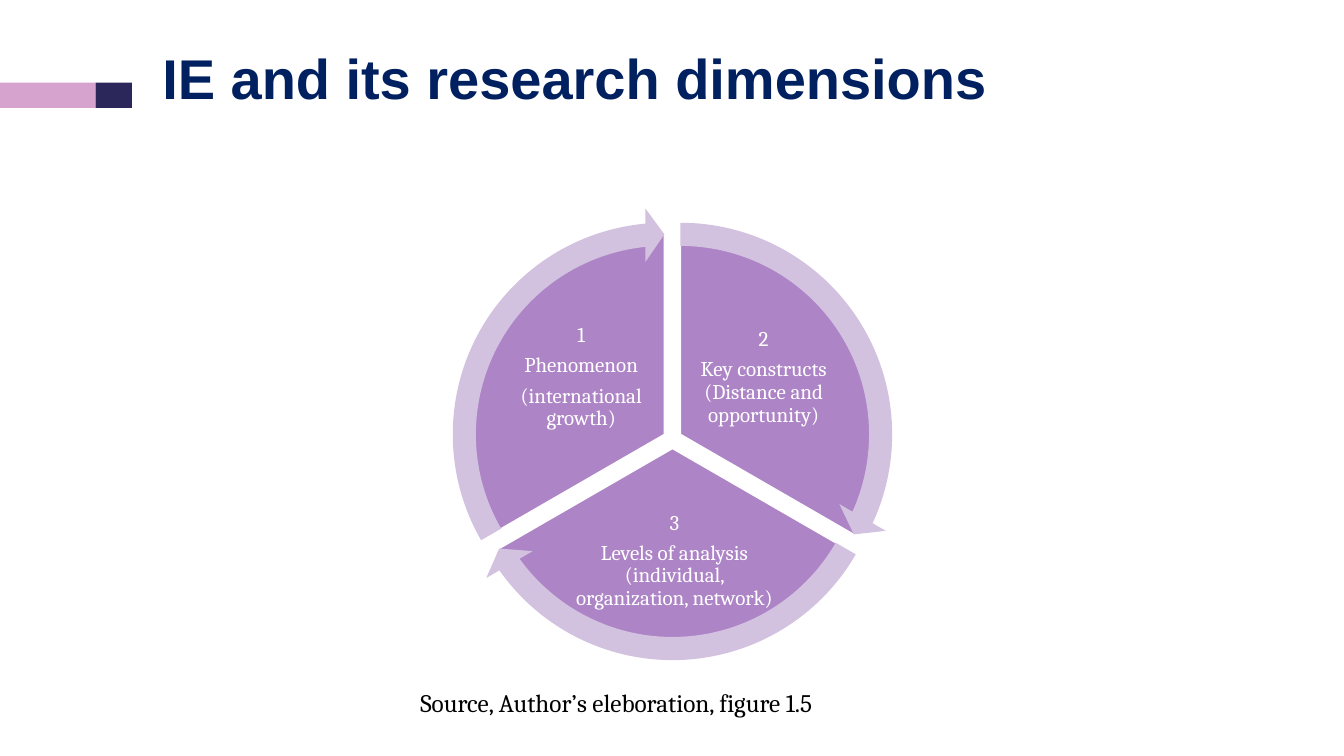
import pptx
import pptx.dml.color
import pptx.enum.shapes
import pptx.enum.text
import pptx.util
from pptx.util import Inches

SHAPES = pptx.enum.shapes.MSO_SHAPE
ALIGN = pptx.enum.text.PP_ALIGN
ANCHOR = pptx.enum.text.MSO_ANCHOR


def color(hex_code):
    return pptx.dml.color.RGBColor.from_string(hex_code)


class Deck:
    heading_font, body_font = "Arial", "Cambria"
    navy, purple, lilac, white, black = "002060", "AD84C6", "D3C2DF", "FFFFFF", "000000"
    pink, indigo = "D5A3CD", "2C275B"

    def __init__(self, width, height):
        self.presentation = pptx.Presentation()
        self.presentation.slide_width = Inches(width)
        self.presentation.slide_height = Inches(height)
        self.slide = None

    def add_slide(self):
        self.slide = self.presentation.slides.add_slide(self.presentation.slide_layouts[5])

    def format_text(self, frame, size, font, hex_code, bold=False):
        for paragraph in frame.paragraphs:
            for run in paragraph.runs:
                run.font.size = pptx.util.Pt(size)
                run.font.name = font
                run.font.bold = bold
                run.font.color.rgb = color(hex_code)

    def title(self, text, left, top, width, height):
        heading = self.slide.shapes.title
        heading.left, heading.top = Inches(left), Inches(top)
        heading.width, heading.height = Inches(width), Inches(height)
        frame = heading.text_frame
        frame.text = text
        frame.vertical_anchor = ANCHOR.MIDDLE
        frame.paragraphs[0].alignment = ALIGN.LEFT
        frame.paragraphs[0].line_spacing = 0.9
        self.format_text(frame, 40, self.heading_font, self.navy, bold=True)

    def shape(self, parent, kind, left, top, width, height, fill, line=None, adjustments=()):
        drawn = parent.shapes.add_shape(
            kind, Inches(left), Inches(top), Inches(width), Inches(height))
        drawn.shadow.inherit = False
        drawn.fill.solid()
        drawn.fill.fore_color.rgb = color(fill)
        if line:
            drawn.line.color.rgb = color(line)
            drawn.line.width = pptx.util.Pt(1)
        else:
            drawn.line.fill.background()
        for index, value in enumerate(adjustments):
            drawn.adjustments[index] = value

    def text_frame(self, parent, text, left, top, width, height):
        frame = parent.shapes.add_textbox(
            Inches(left), Inches(top), Inches(width), Inches(height)).text_frame
        frame.word_wrap = True
        frame.text = text
        return frame

    def sector_label(self, parent, lines, left, top, width, height):
        frame = self.text_frame(parent, "\n".join(lines), left, top, width, height)
        frame.vertical_anchor = ANCHOR.MIDDLE
        frame.margin_left = frame.margin_right = Inches(0.02)
        frame.margin_top = frame.margin_bottom = Inches(0.02)
        for paragraph in frame.paragraphs:
            paragraph.alignment = ALIGN.CENTER
            paragraph.line_spacing = 0.9
            paragraph.space_after = pptx.util.Pt(5.25)
        self.format_text(frame, 15, self.body_font, self.white)

    def caption(self, text, left, top, width, height):
        frame = self.text_frame(self.slide, text, left, top, width, height)
        frame.auto_size = pptx.enum.text.MSO_AUTO_SIZE.SHAPE_TO_FIT_TEXT
        self.format_text(frame, 18, self.body_font, self.black)

    def cycle(self, sectors):
        """Draw labelled pie sectors, then the arrows that run round them.

        Angles are in units of 100000, where 60000 steps make one degree.
        """
        diameter, overhang, head_angle = 4, 0.25, 3.275
        group = self.slide.shapes.add_group_shape()
        for left, top, start, end, lines, label_box in sectors:
            self.shape(group, SHAPES.PIE, left, top, diameter, diameter,
                       self.purple, self.white, (start, end))
            self.sector_label(group, lines, *label_box)
        ring = diameter + 2 * overhang
        for left, top, start, end, _, _ in sectors:
            self.shape(group, SHAPES.CIRCULAR_ARROW, left - overhang, top - overhang, ring, ring,
                       self.lilac,
                       adjustments=(0.051, head_angle, end - head_angle, start, 0.059))


def main():
    deck = Deck(13.33, 7.5)
    deck.add_slide()
    deck.shape(deck.slide, SHAPES.RECTANGLE, 0, 0.82, 0.95, 0.25, deck.pink)
    deck.shape(deck.slide, SHAPES.RECTANGLE, 0.95, 0.82, 0.36, 0.25, deck.indigo)
    deck.title("IE and its research dimensions", 1.51, 0.32, 11.5, 0.98)
    deck.cycle([
        (4.75, 2.31, 162, 18,
         ["2", "Key constructs (Distance and opportunity)"], (6.86, 3.15, 1.43, 1.19)),
        (4.67, 2.45, 18, 90,
         ["3", "Levels of analysis (individual, organization, network)"],
         (5.62, 5.04, 2.14, 1.05)),
        (4.59, 2.31, 90, 162,
         ["1", "Phenomenon", "(international growth)"], (5.05, 3.15, 1.43, 1.19)),
    ])
    deck.caption("Source, Author’s eleboration, figure 1.5", 4.07, 6.77, 4.72, 0.4)
    deck.presentation.save("out.pptx")


if __name__ == "__main__":
    main()
